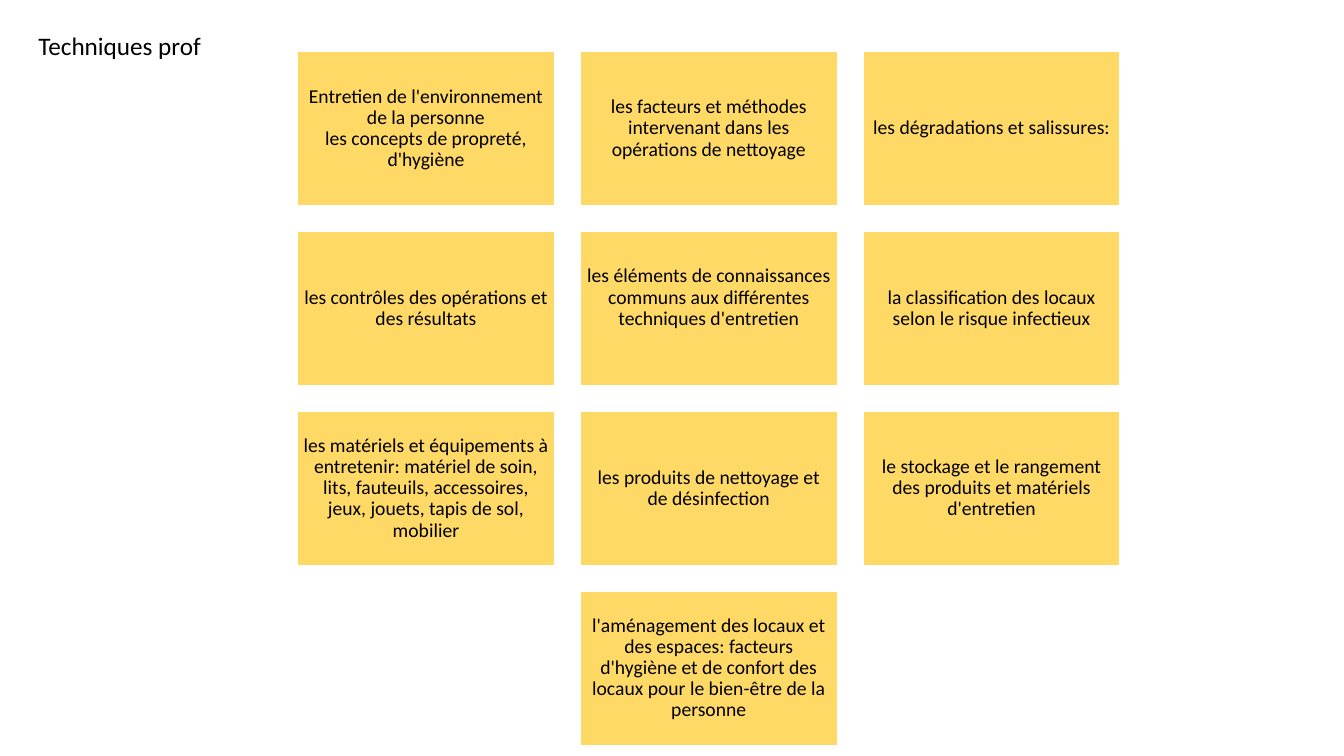
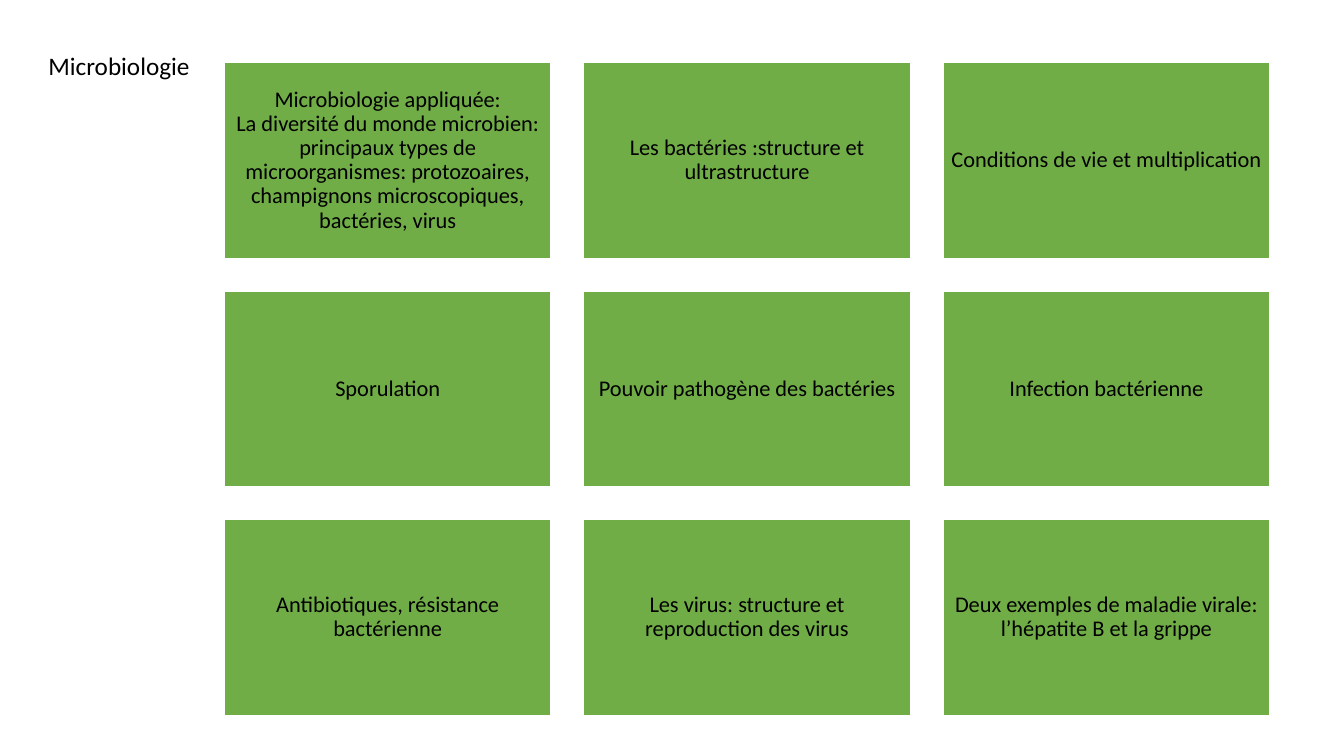
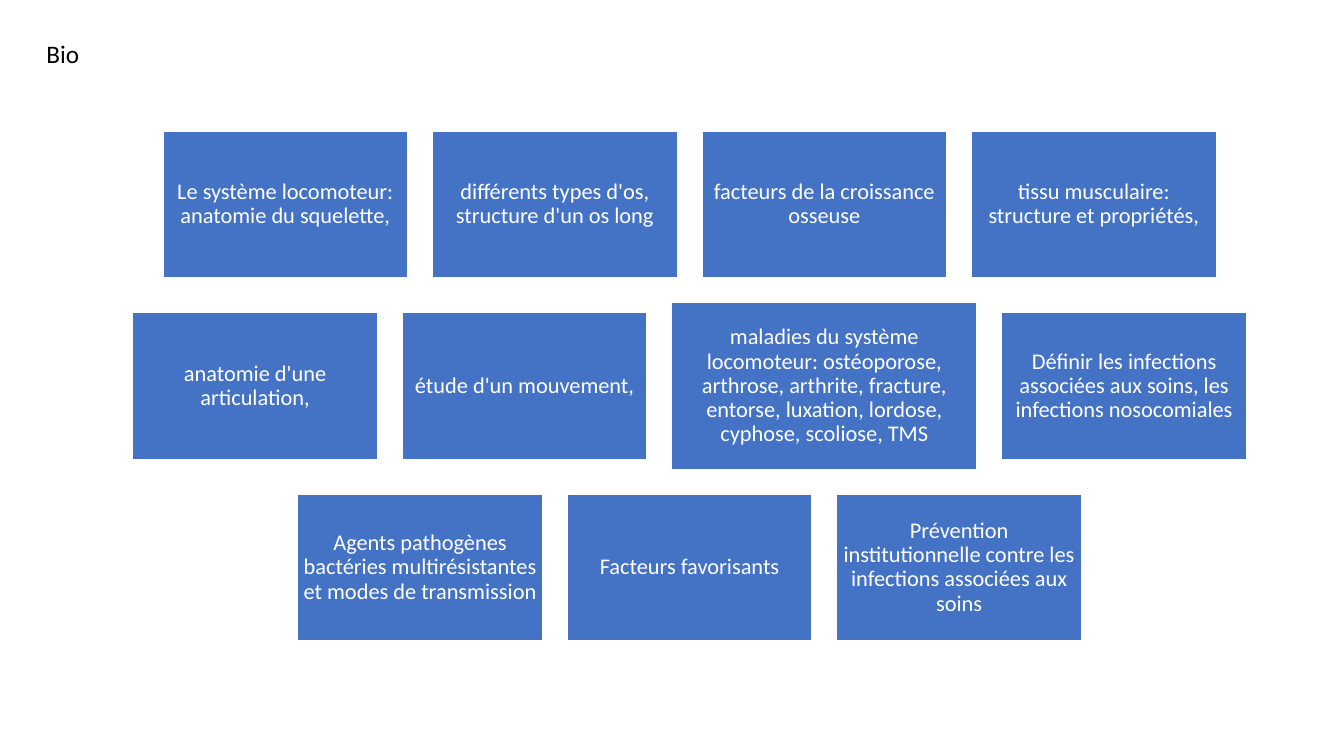
from dataclasses import dataclass

from pptx import Presentation
from pptx.dml.color import RGBColor
from pptx.enum.shapes import MSO_SHAPE
from pptx.enum.text import MSO_ANCHOR, MSO_AUTO_SIZE, PP_ALIGN
from pptx.util import Inches, Pt

COLORS = {
    "yellow": "FFD966",
    "green": "70AD47",
    "blue": "4472C4",
    "black": "000000",
    "white": "FFFFFF",
}
FONT = "Calibri"
TITLE_SIZE = 18
TITLE_HEIGHT = 0.4
CARD_RATIO = 0.6
GAP_RATIO = 0.1
CARD_INSET = 0.06
LINE_SPACING = 0.9


@dataclass
class Card:
    """One topic, with any extra size and lift of its text in inches."""
    text: str
    extra_width: float = 0
    extra_height: float = 0
    lift: float = 0


@dataclass
class Board:
    """Rows of cards, each row centred on the same vertical axis."""
    center: float
    top: float
    card_width: float
    fill: str
    ink: str
    size: int
    rows: list


TECHNIQUES = Board(7.03, 0.51, 2.55, "yellow", "black", 14, [
    [Card("Entretien de l'environnement de la personne\n"
          "les concepts de propreté, d'hygiène"),
     Card("les facteurs et méthodes intervenant dans les opérations de nettoyage"),
     Card("les dégradations et salissures:")],
    [Card("les contrôles des opérations et des résultats"),
     Card("les éléments de connaissances communs aux différentes techniques d'entretien",
          lift=0.21),
     Card("la classification des locaux selon le risque infectieux")],
    [Card("les matériels et équipements à entretenir: matériel de soin, lits, "
          "fauteuils, accessoires, jeux, jouets, tapis de sol, mobilier"),
     Card("les produits de nettoyage et de désinfection"),
     Card("le stockage et le rangement des produits et matériels d'entretien")],
    [Card("l'aménagement des locaux et des espaces: facteurs d'hygiène et de "
          "confort des locaux pour le bien-être de la personne")],
])

MICROBIOLOGY = Board(7.41, 0.62, 3.24, "green", "black", 16, [
    [Card("Microbiologie appliquée:\nLa diversité du monde microbien: principaux "
          "types de microorganismes: protozoaires, champignons microscopiques, "
          "bactéries, virus"),
     Card("Les bactéries :structure et ultrastructure"),
     Card("Conditions de vie et multiplication")],
    [Card("Sporulation"),
     Card("Pouvoir pathogène des bactéries"),
     Card("Infection bactérienne")],
    [Card("Antibiotiques, résistance bactérienne"),
     Card("Les virus: structure et reproduction des virus"),
     Card("Deux exemples de maladie virale: l’hépatite B et la grippe")],
])

BIOLOGY = Board(6.84, 1.3, 2.43, "blue", "white", 16, [
    [Card("Le système locomoteur: anatomie du squelette,"),
     Card("différents types d'os, structure d'un os long"),
     Card("facteurs de la croissance osseuse"),
     Card("tissu musculaire: structure et propriétés,")],
    [Card("anatomie d'une articulation,"),
     Card("étude d'un mouvement,"),
     Card("maladies du système locomoteur: ostéoporose, arthrose, arthrite, "
          "fracture, entorse, luxation, lordose, cyphose, scoliose, TMS",
          extra_width=0.6, extra_height=0.2),
     Card("Définir les infections associées aux soins, les infections nosocomiales")],
    [Card("Agents pathogènes bactéries multirésistantes et modes de transmission"),
     Card("Facteurs favorisants"),
     Card("Prévention institutionnelle contre les infections associées aux soins")],
])


def color(name):
    """Return a named colour."""
    return RGBColor.from_string(COLORS[name])


def write(para, text, size, ink):
    """Add formatted runs, parted by line breaks."""
    for index, line in enumerate(text.split("\n")):
        if index:
            para.add_line_break()
        span = para.add_run()
        span.text = line
        span.font.name = FONT
        span.font.size = Pt(size)
        span.font.color.rgb = color(ink)


def add_page(deck, title, left, top, width):
    """Add a title-only page with a small heading at the left."""
    page = deck.slides.add_slide(deck.slide_layouts[5])
    box = page.shapes.title
    box.left, box.top = Inches(left), Inches(top)
    box.width, box.height = Inches(width), Inches(TITLE_HEIGHT)
    frame = box.text_frame
    frame.auto_size = MSO_AUTO_SIZE.NONE
    frame.vertical_anchor = MSO_ANCHOR.TOP
    para = frame.paragraphs[0]
    para.alignment = PP_ALIGN.LEFT
    write(para, title, TITLE_SIZE, "black")
    return page


def add_card(page, board, card, left, top, width, height):
    """Draw one filled card with centred text."""
    box = page.shapes.add_shape(MSO_SHAPE.RECTANGLE, Inches(left), Inches(top),
                                Inches(width), Inches(height))
    box.shadow.inherit = False
    box.fill.solid()
    box.fill.fore_color.rgb = color(board.fill)
    box.line.color.rgb = color("white")
    box.line.width = Pt(1)
    frame = box.text_frame
    frame.word_wrap = True
    frame.vertical_anchor = MSO_ANCHOR.MIDDLE
    frame.margin_left = frame.margin_right = frame.margin_top = Inches(CARD_INSET)
    frame.margin_bottom = Inches(CARD_INSET + card.lift)
    para = frame.paragraphs[0]
    para.alignment = PP_ALIGN.CENTER
    para.line_spacing = LINE_SPACING
    write(para, card.text, board.size, board.ink)


def add_board(page, board):
    """Lay out the rows of cards from the top down."""
    gap = board.card_width * GAP_RATIO
    base_height = board.card_width * CARD_RATIO
    top = board.top
    for row in board.rows:
        widths = [board.card_width + card.extra_width for card in row]
        heights = [base_height + card.extra_height for card in row]
        row_height = max(heights)
        left = board.center - (sum(widths) + gap * (len(row) - 1)) / 2
        for card, width, height in zip(row, widths, heights):
            add_card(page, board, card, left, top + (row_height - height) / 2,
                     width, height)
            left += width + gap
        top += row_height + gap


def main():
    """Build and save the deck."""
    deck = Presentation()
    deck.slide_width, deck.slide_height = Inches(13.33), Inches(7.5)
    add_board(add_page(deck, "Techniques prof", 0.28, 0.25, 2.6), TECHNIQUES)
    add_board(add_page(deck, "Microbiologie", 0.38, 0.45, 1.74), MICROBIOLOGY)
    add_board(add_page(deck, "Bio", 0.36, 0.33, 1.48), BIOLOGY)
    deck.save("out.pptx")


if __name__ == "__main__":
    main()
